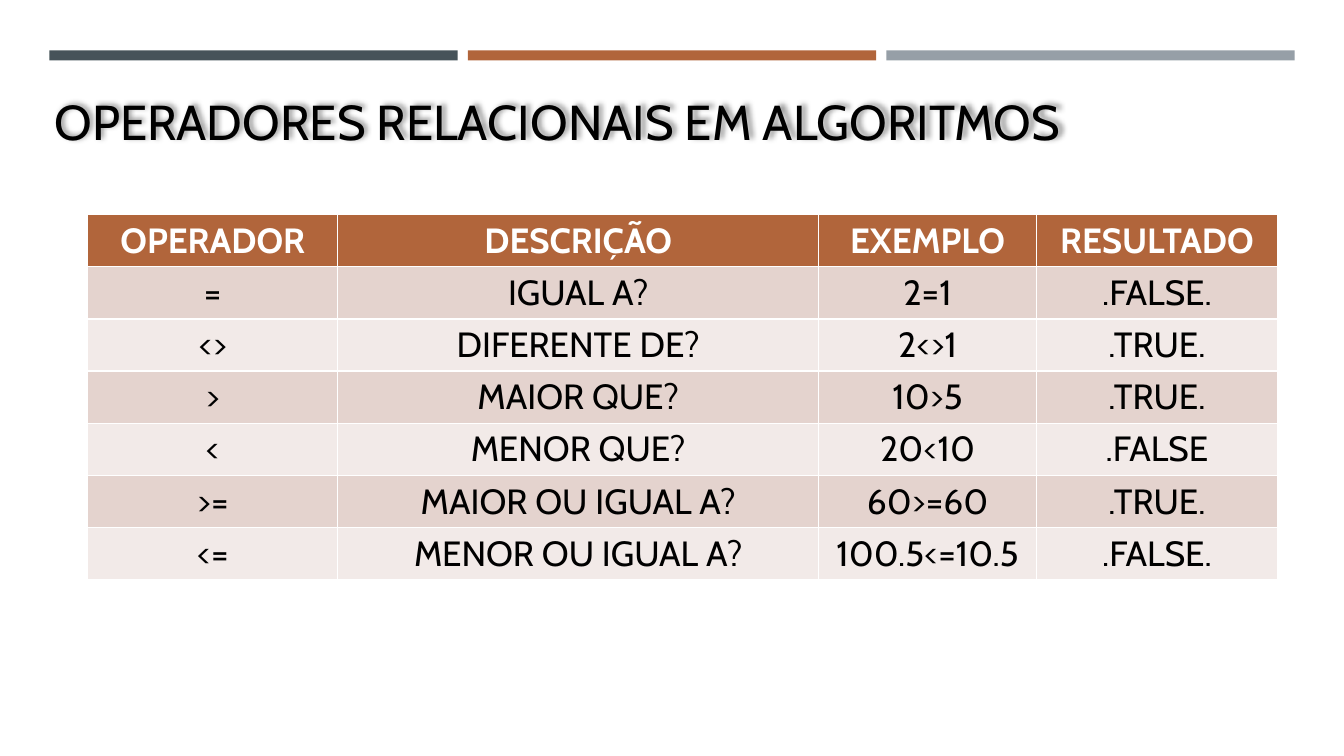
"""Build the slide on relational operators in algorithms."""
from lxml import etree
from pptx import Presentation
from pptx.dml.color import RGBColor
from pptx.enum.shapes import MSO_SHAPE
from pptx.enum.text import MSO_ANCHOR, MSO_AUTO_SIZE, PP_ALIGN
from pptx.oxml import parse_xml
from pptx.util import Inches, Pt

RECTANGLE = MSO_SHAPE.RECTANGLE
CENTER = PP_ALIGN.CENTER
MIDDLE = MSO_ANCHOR.MIDDLE
GROW = MSO_AUTO_SIZE.SHAPE_TO_FIT_TEXT
DRAWING_NS = "http://schemas.openxmlformats.org/drawingml/2006/main"
COLORS = {
    "slate": "465359",
    "rust": "B1653B",
    "gray": "969FA7",
    "band_dark": "E4D3CE",
    "band_light": "F2EAE8",
    "black": "000000",
    "white": "FFFFFF",
}


def color(name):
    return RGBColor.from_string(COLORS[name])


def write(frame, text, size, ink, bold=False):
    paragraph = frame.paragraphs[0]
    paragraph.alignment = CENTER
    run = paragraph.add_run()
    run.text = text
    for attribute, value in {"name": "Cabin", "size": Pt(size), "bold": bold}.items():
        setattr(run.font, attribute, value)
    run.font.color.rgb = color(ink)


presentation = Presentation()
presentation.slide_width = Inches(13.33)
presentation.slide_height = Inches(7.5)
slide = presentation.slides.add_slide(presentation.slide_layouts[6])

for position, name in enumerate(["slate", "rust", "gray"]):
    stripe = slide.shapes.add_shape(
        RECTANGLE, Inches(0.49 + 4.15 * position), Inches(0.5), Inches(4.05), Inches(0.1)
    )
    stripe.shadow.inherit = False
    stripe.fill.solid()
    stripe.fill.fore_color.rgb = color(name)
    stripe.line.fill.background()

title = slide.shapes.add_textbox(Inches(0.36), Inches(0.86), Inches(10.34), Inches(0.69))
title.text_frame.word_wrap = False
title.text_frame.auto_size = GROW
write(title.text_frame, "OPERADORES RELACIONAIS EM ALGORITMOS", 35, "black")
title_shadow = parse_xml(
    f'<a:effectLst xmlns:a="{DRAWING_NS}"/>'
)
glow = etree.SubElement(
    title_shadow,
    f"{{{DRAWING_NS}}}outerShdw",
    blurRad="50800", dist="38100", dir="18900000", algn="bl", rotWithShape="0",
)
glow_color = etree.SubElement(glow, f"{{{DRAWING_NS}}}srgbClr", val=COLORS["black"])
etree.SubElement(glow_color, f"{{{DRAWING_NS}}}alpha", val="40000")
title.element.spPr.append(title_shadow)

operators = [
    ("OPERADOR", "DESCRIÇÃO", "EXEMPLO", "RESULTADO"),
    ("=", "IGUAL A?", "2=1", ".FALSE."),
    ("<>", "DIFERENTE DE?", "2<>1", ".TRUE."),
    (">", "MAIOR QUE?", "10>5", ".TRUE."),
    ("<", "MENOR QUE?", "20<10", ".FALSE"),
    (">=", "MAIOR OU IGUAL A?", "60>=60", ".TRUE."),
    ("<=", "MENOR OU IGUAL A?", "100.5<=10.5", ".FALSE."),
]
column_widths = [2.48, 4.77, 2.16, 2.39]
operator_table = slide.shapes.add_table(
    len(operators), len(column_widths), Inches(0.87), Inches(2.13), Inches(11.8), Inches(3.62)
).table
for column, width in zip(operator_table.columns, column_widths):
    column.width = Inches(width)

for row, entries in enumerate(operators):
    header = row == 0
    band = "rust" if header else "band_dark" if row % 2 else "band_light"
    for column, entry in enumerate(entries):
        cell = operator_table.cell(row, column)
        cell.fill.solid()
        cell.fill.fore_color.rgb = color(band)
        cell.vertical_anchor = MIDDLE
        write(cell.text_frame, entry, 25, "white" if header else "black", header)

presentation.save("out.pptx")
